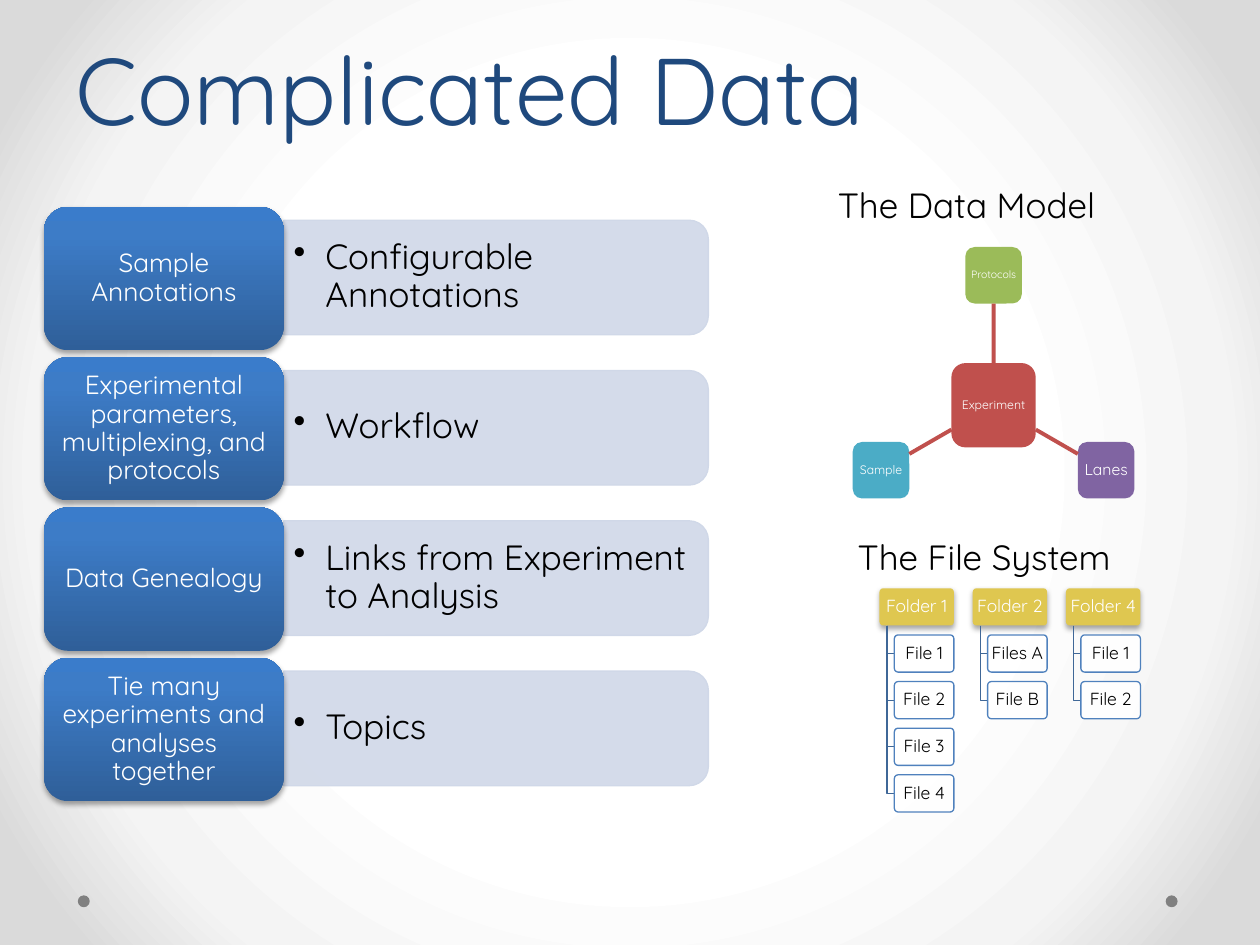
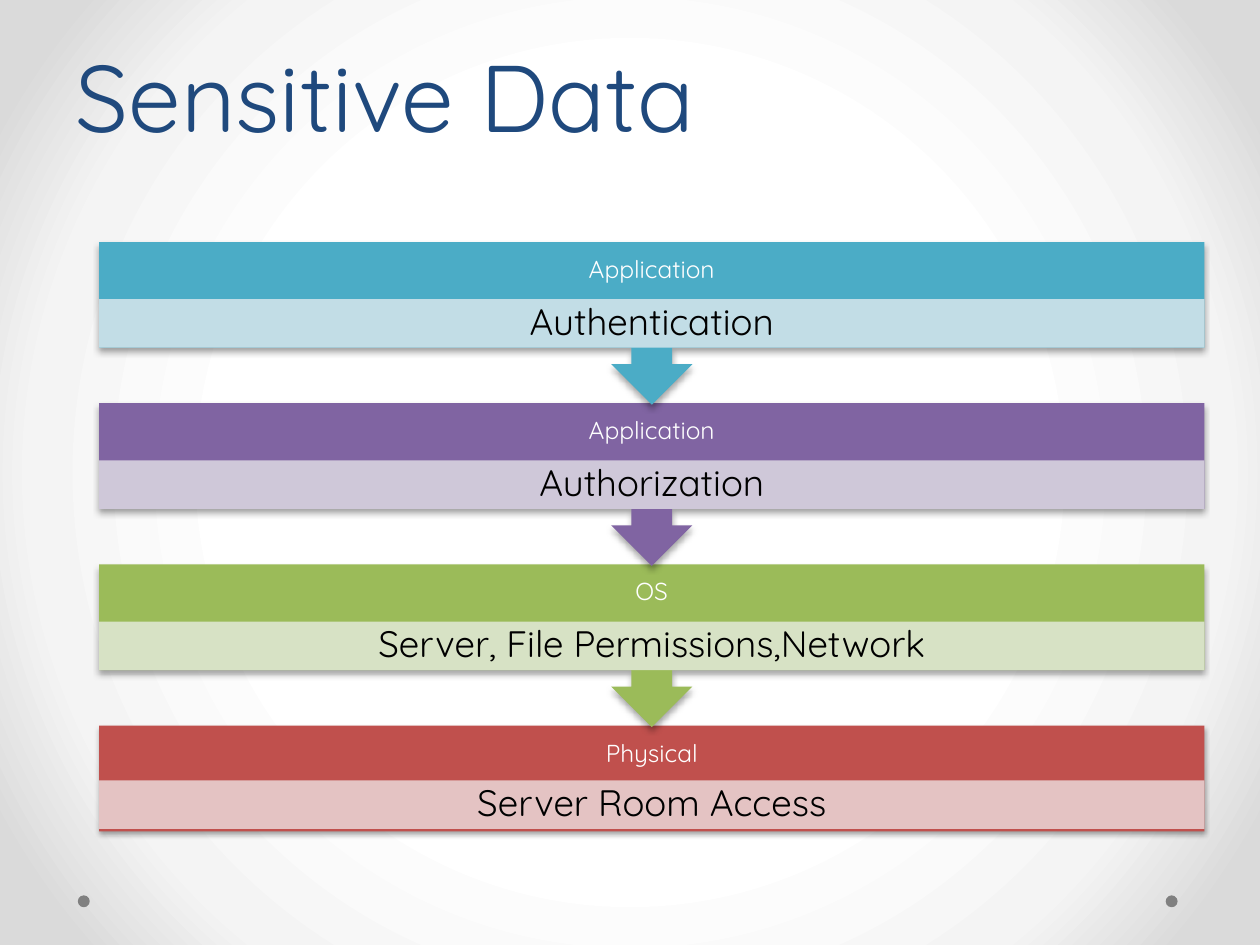
"""Build two slides on complicated and sensitive data."""
import dataclasses
import math

import lxml.etree
import pptx
import pptx.dml.color
import pptx.enum.shapes
import pptx.enum.text
import pptx.oxml.ns
import pptx.util

Cm = pptx.util.Cm
Pt = pptx.util.Pt
SHAPE = pptx.enum.shapes.MSO_SHAPE
ANCHOR = pptx.enum.text.MSO_ANCHOR
ALIGN = pptx.enum.text.PP_ALIGN


@dataclasses.dataclass(frozen=True)
class Theme:
    font: str = "Quicksand"
    title: str = "1F497D"
    text: str = "000000"
    light: str = "FFFFFF"
    dot: str = "808080"
    panel: str = "D0D8E8"
    red: str = "C0504D"
    green: str = "9BBB59"
    purple: str = "8064A2"
    teal: str = "4BACC6"
    red_tint: str = "E8D0D0"
    green_tint: str = "DEE7D1"
    purple_tint: str = "D8D3E0"
    teal_tint: str = "D0E3EA"
    folder: str = "DFC750"
    file_line: str = "4F81BD"
    branch: str = "3F6797"
    shadow: str = "000000"
    background: tuple = ((50, "FFFFFF"), (76, "F4F4F4"), (92, "DADADA"))
    label: tuple = ((0, "2F5F99"), (80, "3D7CC7"), (100, "3A7CCB"))
    title_size: float = 54
    title_spacing: float = 58
    heading_size: float = 20
    label_size: float = 15
    layer_size: float = 14
    strip_size: float = 21
    file_size: float = 10
    node_size: float = 7
    small_node_size: float = 6
    large_node_size: float = 9


def rgb(color):
    return pptx.dml.color.RGBColor.from_string(color)


def set_values(target, values):
    for name, value in values.items():
        setattr(target, name, value)


def add_child(parent, tag, **attributes):
    child = lxml.etree.SubElement(parent, pptx.oxml.ns.qn(tag))
    for name, value in attributes.items():
        child.set(name, str(value))
    return child


def set_gradient(fill, element, stops, angle=None):
    fill.gradient()
    gradient = element.xpath(".//a:gradFill")[0]
    for child in list(gradient):
        gradient.remove(child)
    stop_list = add_child(gradient, "a:gsLst")
    for position, color in stops:
        stop = add_child(stop_list, "a:gs", pos=position * 1000)
        add_child(stop, "a:srgbClr", val=color)
    if angle is None:
        circle = add_child(gradient, "a:path", path="circle")
        add_child(circle, "a:fillToRect", l=50000, t=50000, r=50000, b=50000)
    else:
        add_child(gradient, "a:lin", ang=angle * 60000, scaled=0)


class Deck:
    def __init__(self, theme):
        self.theme = theme
        self.presentation = pptx.Presentation()
        set_values(self.presentation, {"slide_width": Cm(25.4), "slide_height": Cm(19.05)})
        self.slide = None
        master = self.presentation.slide_master
        set_gradient(master.background.fill, master.element, theme.background)

    def add_slide(self, title, title_height):
        theme = self.theme
        layout = self.presentation.slide_layouts.get_by_name("Title Only")
        self.slide = self.presentation.slides.add_slide(layout)
        shape = self.slide.shapes.title
        set_values(shape, {"left": Cm(1.27), "top": Cm(0), "width": Cm(22.86),
                           "height": Cm(title_height)})
        self.put_text(shape, title, theme.title_size, theme.title, align=ALIGN.LEFT,
                      anchor=ANCHOR.BOTTOM, spacing=Pt(theme.title_spacing),
                      insets=(0.25, 0.13, 0.25, 0.13))

    def add_master_dots(self):
        master = self.presentation.slide_master
        for number, left in enumerate((1.57, 23.5)):
            dot = self.shape(SHAPE.OVAL, (left, 18.05, 0.24, 0.24), self.theme.dot)
            dot.element.nvSpPr.cNvPr.id = 100 + number
            master.shapes.element.append(dot.element)

    def put_text(self, shape, text, size, color, align=ALIGN.CENTER, anchor=ANCHOR.MIDDLE,
                 spacing=0.9, insets=(0.05, 0.05, 0.05, 0.05)):
        frame = shape.text_frame
        sides = ("margin_left", "margin_top", "margin_right", "margin_bottom")
        set_values(frame, {"word_wrap": True, "vertical_anchor": anchor,
                           "auto_size": pptx.enum.text.MSO_AUTO_SIZE.NONE})
        set_values(frame, {side: Cm(inset) for side, inset in zip(sides, insets)})
        paragraph = frame.paragraphs[0]
        set_values(paragraph, {"alignment": align, "line_spacing": spacing})
        run = paragraph.add_run()
        run.text = text
        set_values(run.font, {"name": self.theme.font, "size": Pt(size)})
        run.font.color.rgb = rgb(color)
        return paragraph

    def text(self, box, text, size, **options):
        shape = self.slide.shapes.add_textbox(*map(Cm, box))
        return self.put_text(shape, text, size, self.theme.text, align=ALIGN.LEFT, **options)

    def heading(self, box, text):
        self.text(box, text, self.theme.heading_size, anchor=ANCHOR.TOP, spacing=1.0,
                  insets=(0.25, 0.13, 0.25, 0.13))

    def bullet(self, box, text):
        paragraph = self.text(box, text, self.theme.heading_size, insets=(0.2, 0.1, 0.2, 0.1))
        properties = paragraph._p.get_or_add_pPr()
        properties.set("marL", str(Cm(0.64)))
        properties.set("indent", str(-Cm(0.64)))
        add_child(properties, "a:buChar", char="•")

    def shape(self, kind, box, fill, line=None, alpha=None, shadow=False, corner=None):
        shape = self.slide.shapes.add_shape(kind, *map(Cm, box))
        shape.shadow.inherit = False
        if isinstance(fill, tuple):
            set_gradient(shape.fill, shape.element, fill, angle=270)
        else:
            shape.fill.solid()
            shape.fill.fore_color.rgb = rgb(fill)
        if line:
            self.draw_line(shape, line, 0.75)
        else:
            shape.line.fill.background()
        if alpha:
            color = shape.element.xpath("./p:spPr/a:solidFill/a:srgbClr")[0]
            add_child(color, "a:alpha", val=alpha * 1000)
        if shadow:
            effects = shape.element.xpath("./p:spPr/a:effectLst")[0]
            outer = add_child(effects, "a:outerShdw", blurRad=int(Pt(3.1)),
                              dist=int(Pt(1.8)), dir=90 * 60000, rotWithShape=0)
            color = add_child(outer, "a:srgbClr", val=self.theme.shadow)
            add_child(color, "a:alpha", val=35000)
        if corner:
            shape.adjustments[0] = corner
        return shape

    def draw_line(self, shape, color, width):
        shape.line.color.rgb = rgb(color)
        shape.line.width = Pt(width)

    def connector(self, start, end, color, width):
        connector = self.slide.shapes.add_connector(
            pptx.enum.shapes.MSO_CONNECTOR.STRAIGHT, *map(Cm, start + end))
        self.draw_line(connector, color, width)
        add_child(connector.element.spPr, "a:effectLst")
        return connector

    def branch(self, points, color):
        start, *rest = [tuple(map(Cm, point)) for point in points]
        builder = self.slide.shapes.build_freeform(*start)
        builder.add_line_segments(rest, close=False)
        shape = builder.convert_to_shape()
        shape.shadow.inherit = False
        shape.fill.background()
        self.draw_line(shape, color, 0.75)


def draw_topics(deck):
    topics = (
        ("Sample Annotations", "Configurable Annotations"),
        ("Experimental parameters, multiplexing, and protocols", "Workflow"),
        ("Data Genealogy", "Links from Experiment to Analysis"),
        ("Tie many experiments and analyses together", "Topics"),
    )
    theme = deck.theme
    panel_left, panel_width, panel_height = 5.72, 8.56, 2.31
    shift = (panel_width - panel_height) / 2
    for row, (label, detail) in enumerate(topics):
        top = 4.17 + row * 3.03
        panel = deck.shape(SHAPE.ROUND_2_SAME_RECTANGLE,
                           (panel_left + shift, top + 0.27 - shift, panel_height, panel_width),
                           theme.panel, line=theme.panel, alpha=90)
        panel.rotation = 90
        deck.bullet((panel_left, top + 0.38, 8.46, 2.08), detail)
        button = deck.shape(SHAPE.ROUNDED_RECTANGLE, (0.89, top, 4.83, 2.89),
                            theme.label, shadow=True)
        deck.put_text(button, label, theme.label_size, theme.light,
                      insets=(0.15, 0.08, 0.15, 0.08))


def draw_data_model(deck):
    theme = deck.theme
    center, radius, hub_side, node_side = (20.03, 8.17), 2.62, 1.7, 1.14

    def node(middle, side, name, size, color):
        box = (middle[0] - side / 2, middle[1] - side / 2, side, side)
        shape = deck.shape(SHAPE.ROUNDED_RECTANGLE, box, color)
        deck.put_text(shape, name, size, theme.light)
        return shape

    deck.heading((16.64, 3.56, 6.02, 1.12), "The Data Model")
    hub = node(center, hub_side, "Experiment", theme.node_size, theme.red)
    satellites = (("Protocols", theme.small_node_size, theme.green, -90),
                  ("Lanes", theme.large_node_size, theme.purple, 30),
                  ("Sample", theme.node_size, theme.teal, 150))
    for name, size, color, degrees in satellites:
        across, down = math.cos(math.radians(degrees)), math.sin(math.radians(degrees))
        reach = max(abs(across), abs(down))

        def along(distance):
            return center[0] + distance * across, center[1] + distance * down

        satellite = node(along(radius), node_side, name, size, color)
        spoke = deck.connector(along(hub_side / 2 / reach),
                               along(radius - node_side / 2 / reach), theme.red, 2.25)
        if degrees == -90:
            spoke.begin_connect(hub, 0)
            spoke.end_connect(satellite, 2)


def draw_file_system(deck):
    theme = deck.theme
    folders = (("Folder 1", ("File 1", "File 2", "File 3", "File 4")),
               ("Folder 2", ("Files A", "File B")),
               ("Folder 4", ("File 1", "File 2")))
    top, height, row_pitch = 11.86, 0.75, 0.94
    insets = (0.04, 0.03, 0.04, 0.03)
    for column, (folder, files) in enumerate(folders):
        left = 17.73 + column * 1.88
        tab = deck.shape(SHAPE.ROUNDED_RECTANGLE, (left, top, 1.5, height), theme.folder,
                         shadow=True, corner=0.1)
        deck.put_text(tab, folder, theme.file_size, theme.light, insets=insets)
        for row, name in enumerate(files, start=1):
            file_top = top + row * row_pitch
            middle = file_top + height / 2
            deck.branch(((left + 0.15, top + height), (left + 0.15, middle),
                         (left + 0.3, middle)), theme.branch)
            card = deck.shape(SHAPE.ROUNDED_RECTANGLE, (left + 0.3, file_top, 1.2, height),
                              theme.light, line=theme.file_line, alpha=90, corner=0.1)
            deck.put_text(card, name, theme.file_size, theme.text, insets=insets)
    deck.heading((17.04, 10.67, 6.02, 1.12), "The File System")


def draw_security_layers(deck):
    theme = deck.theme
    layers = (
        ("Application", "Authentication", theme.teal, theme.teal_tint),
        ("Application", "Authorization", theme.purple, theme.purple_tint),
        ("OS", "Server, File Permissions,Network", theme.green, theme.green_tint),
        ("Physical", "Server Room Access", theme.red, theme.red_tint),
    )
    left, width = 2.0, 22.28
    for row, (layer, control, color, tint) in reversed(list(enumerate(layers))):
        top = 4.88 + row * 3.25
        last = row == len(layers) - 1
        kind = SHAPE.RECTANGLE if last else SHAPE.DOWN_ARROW_CALLOUT
        height = 2.13 if last else 3.28
        block = deck.shape(kind, (left, top, width, height), color, shadow=True)
        deck.put_text(block, layer, theme.layer_size, theme.light,
                      insets=(0.28, 0.28, 0.28, 1.26))
        strip_top = top + (1.1 if last else 1.15)
        strip = deck.shape(SHAPE.RECTANGLE, (left, strip_top, width, 0.98), tint, alpha=90)
        deck.put_text(strip, control, theme.strip_size, theme.text,
                      insets=(0.41, 0.08, 0.41, 0.08))


def main():
    deck = Deck(Theme())
    deck.add_slide("Complicated Data", 3.05)
    deck.add_master_dots()
    draw_topics(deck)
    draw_data_model(deck)
    draw_file_system(deck)
    deck.add_slide("Sensitive Data", 3.18)
    draw_security_layers(deck)
    deck.presentation.save("out.pptx")


if __name__ == "__main__":
    main()
